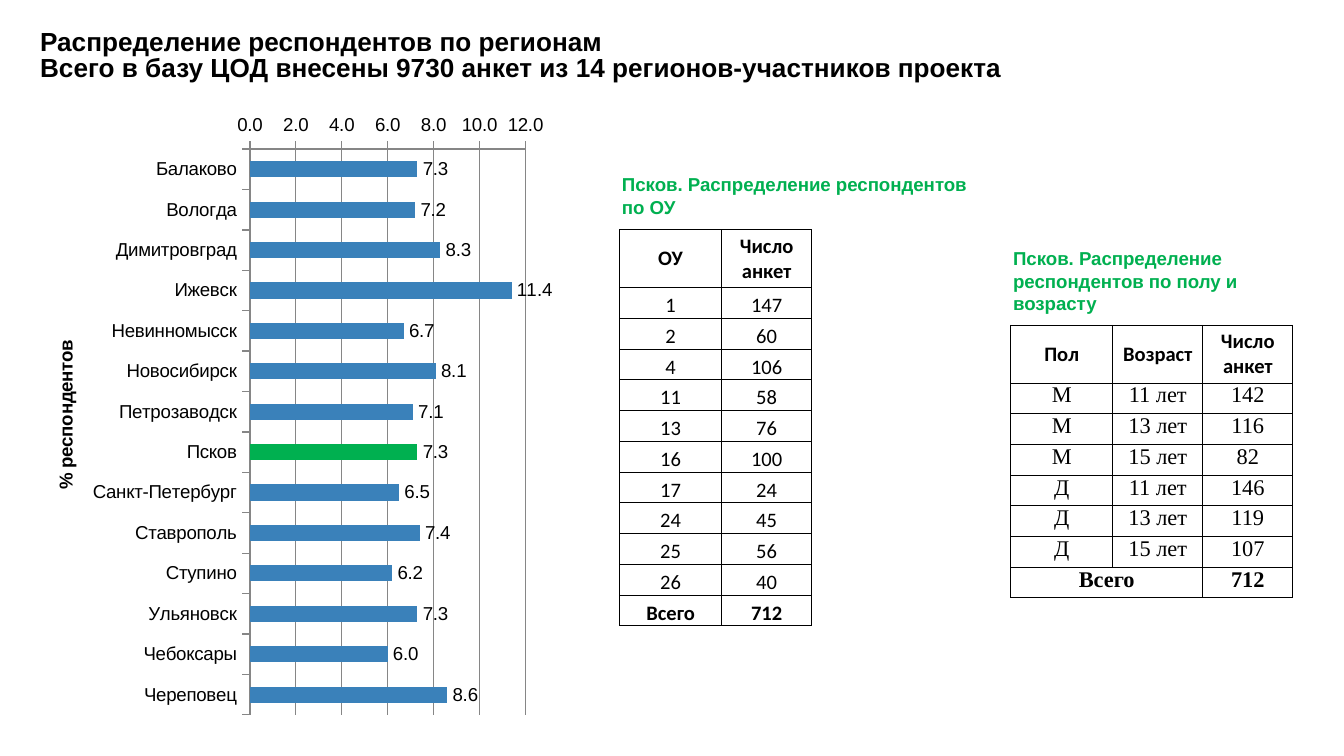
from dataclasses import dataclass

from lxml import etree
from pptx import Presentation
from pptx.chart.data import CategoryChartData
from pptx.dml.color import RGBColor
from pptx.enum.chart import XL_CHART_TYPE, XL_LABEL_POSITION, XL_TICK_MARK
from pptx.enum.text import MSO_ANCHOR, MSO_AUTO_SIZE, PP_ALIGN
from pptx.oxml import parse_xml
from pptx.oxml.ns import nsdecls, qn
from pptx.util import Inches, Pt

BAR = XL_CHART_TYPE.BAR_CLUSTERED
OUT_END = XL_LABEL_POSITION.OUTSIDE_END
OUTSIDE = XL_TICK_MARK.OUTSIDE
TOP, MIDDLE, BOTTOM = MSO_ANCHOR.TOP, MSO_ANCHOR.MIDDLE, MSO_ANCHOR.BOTTOM
CENTER = PP_ALIGN.CENTER
GROW = MSO_AUTO_SIZE.SHAPE_TO_FIT_TEXT
BLACK, GREEN, BLUE, GRAY = "000000", "00B050", "3A81BA", "868686"
HEAD = 0.43


@dataclass
class Label:
    text: str
    left: float
    top: float
    width: float
    height: float
    size: int
    color: str
    wrap: bool = True


@dataclass
class Grid:
    left: float
    top: float
    height: float
    widths: list[float]
    rows: list[list[str]]
    font: str
    size: int
    anchor: MSO_ANCHOR


@dataclass
class Frame:
    left: float
    top: float
    width: float
    height: float


CHART = Frame(0.2, 0.77, 3.92, 4.65)
PLOT = Frame(1.86, 1.11, 2.05, 4.21)
LABELS = [
    Label("Распределение респондентов по регионам", 0.2, 0.14, 5.2, 0.34, 14, BLACK),
    Label("Всего в базу ЦОД внесены 9730 анкет из 14 регионов-участников проекта",
          0.2, 0.33, 7.4, 0.34, 14, BLACK, False),
    Label("Псков. Распределение респондентов по полу и возрасту",
          7.44, 1.79, 2.2, 0.61, 10, GREEN),
    Label("Псков. Распределение респондентов по ОУ",
          4.53, 1.24, 2.83, 0.44, 10, GREEN),
]
SCHOOLS = Grid(4.61, 1.71, 2.95, [0.76, 0.67], [
    ["ОУ", "Число анкет"], ["1", "147"], ["2", "60"], ["4", "106"],
    ["11", "58"], ["13", "76"], ["16", "100"], ["17", "24"],
    ["24", "45"], ["25", "56"], ["26", "40"], ["Всего", "712"],
], "Calibri", 11, BOTTOM)
AGES = Grid(7.52, 2.42, 2.03, [0.76, 0.67, 0.67], [
    ["Пол", "Возраст", "Число анкет"],
    ["М", "11 лет", "142"], ["М", "13 лет", "116"], ["М", "15 лет", "82"],
    ["Д", "11 лет", "146"], ["Д", "13 лет", "119"], ["Д", "15 лет", "107"],
    ["Всего", "", "712"],
], "Times New Roman", 12, TOP)
SHARES = {
    "Балаково": 7.3, "Вологда": 7.2, "Димитровград": 8.3, "Ижевск": 11.4,
    "Невинномысск": 6.7, "Новосибирск": 8.1, "Петрозаводск": 7.1,
    "Псков": 7.3, "Санкт-Петербург": 6.5, "Ставрополь": 7.4,
    "Ступино": 6.2, "Ульяновск": 7.3, "Чебоксары": 6.0, "Череповец": 8.6,
}


def rgb(code: str) -> RGBColor:
    return RGBColor.from_string(code)


def style(font, name: str, size: int, color: str, bold: bool) -> None:
    font.name, font.size, font.bold = name, Pt(size), bold
    font.color.rgb = rgb(color)


def add_label(slide, item: Label) -> None:
    box = slide.shapes.add_textbox(*map(Inches, (item.left, item.top, item.width, item.height)))
    frame = box.text_frame
    frame.word_wrap = item.wrap
    frame.auto_size = GROW
    frame.text = item.text
    style(frame.paragraphs[0].font, "Arial", item.size, item.color, True)


def add_edges(cell) -> None:
    props = cell._tc.get_or_add_tcPr()
    for spot, side in enumerate("LRTB"):
        props.insert(spot, parse_xml(
            f'<a:ln{side} {nsdecls("a")} w="6350"><a:solidFill>'
            f'<a:srgbClr val="{BLACK}"/></a:solidFill></a:ln{side}>'))


def add_grid(slide, grid: Grid):
    count = len(grid.rows)
    highs = [HEAD] + [(grid.height - HEAD) / (count - 1)] * (count - 1)
    table = slide.shapes.add_table(
        count, len(grid.widths), Inches(grid.left), Inches(grid.top),
        Inches(sum(grid.widths)), Inches(grid.height)).table
    table.first_row = table.horz_banding = False
    for column, width in zip(table.columns, grid.widths):
        column.width = Inches(width)
    for row, high in zip(table.rows, highs):
        row.height = Inches(high)
    for i, row in enumerate(grid.rows):
        head, total = i == 0, row[0] == "Всего"
        for j, text in enumerate(row):
            cell = table.cell(i, j)
            cell.margin_left = cell.margin_right = 0
            cell.margin_top = cell.margin_bottom = 0
            cell.vertical_anchor = MIDDLE if head else grid.anchor
            cell.fill.background()
            add_edges(cell)
            cell.text = text
            para = cell.text_frame.paragraphs[0]
            para.alignment = CENTER
            style(para.font, "Calibri" if head else grid.font,
                  11 if head else grid.size, BLACK, head or total)
    return table


def place_plot(chart) -> None:
    area = chart._chartSpace.chart.plotArea
    for old in area.findall(qn("c:layout")):
        area.remove(old)
    layout = etree.Element(qn("c:layout"))
    manual = etree.SubElement(layout, qn("c:manualLayout"))
    spots = {
        "layoutTarget": "inner", "xMode": "edge", "yMode": "edge",
        "x": (PLOT.left - CHART.left) / CHART.width,
        "y": (PLOT.top - CHART.top) / CHART.height,
        "w": PLOT.width / CHART.width,
        "h": PLOT.height / CHART.height,
    }
    for tag, value in spots.items():
        etree.SubElement(manual, qn(f"c:{tag}")).set("val", str(value))
    area.insert(0, layout)


def add_bars(slide) -> None:
    data = CategoryChartData(number_format="0.0")
    data.categories = list(SHARES)
    data.add_series("Series 1", list(SHARES.values()))
    spot = map(Inches, (CHART.left, CHART.top, CHART.width, CHART.height))
    chart = slide.shapes.add_chart(BAR, *spot, data).chart
    chart.has_legend = chart.has_title = False
    style(chart.font, "Arial", 10, BLACK, False)
    place_plot(chart)

    names, scale = chart.category_axis, chart.value_axis
    names.reverse_order = True
    names.has_major_gridlines = False
    names.axis_title.text_frame.text = "% респондентов"
    style(names.axis_title.text_frame.paragraphs[0].font, "Arial", 10, BLACK, True)
    scale.minimum_scale, scale.maximum_scale, scale.major_unit = 0, 12, 2
    scale.has_major_gridlines = True
    scale.tick_labels.number_format = "0.0"
    scale.tick_labels.number_format_is_linked = False
    for axis in (names, scale):
        axis.major_tick_mark = OUTSIDE
    for part in (names, scale, scale.major_gridlines):
        part.format.line.color.rgb = rgb(GRAY)
        part.format.line.width = Pt(0.75)

    plot = chart.plots[0]
    plot.gap_width = 150
    plot.vary_by_categories = False
    plot.has_data_labels = True
    marks = plot.data_labels
    marks.show_value = True
    marks.number_format = "0.0"
    marks.number_format_is_linked = False
    marks.position = OUT_END
    bars = plot.series[0]
    pskov = bars.points[list(SHARES).index("Псков")]
    for part, color in ((bars, BLUE), (pskov, GREEN)):
        part.format.fill.solid()
        part.format.fill.fore_color.rgb = rgb(color)


def main() -> None:
    deck = Presentation()
    deck.slide_width = Inches(10)
    deck.slide_height = deck.slide_width * 9 // 16
    slide = deck.slides.add_slide(deck.slide_layouts[6])
    for item in LABELS:
        add_label(slide, item)
    add_grid(slide, SCHOOLS)
    ages = add_grid(slide, AGES)
    last = len(AGES.rows) - 1
    ages.cell(last, 0).merge(ages.cell(last, 1))
    add_bars(slide)
    deck.save("out.pptx")


if __name__ == "__main__":
    main()
